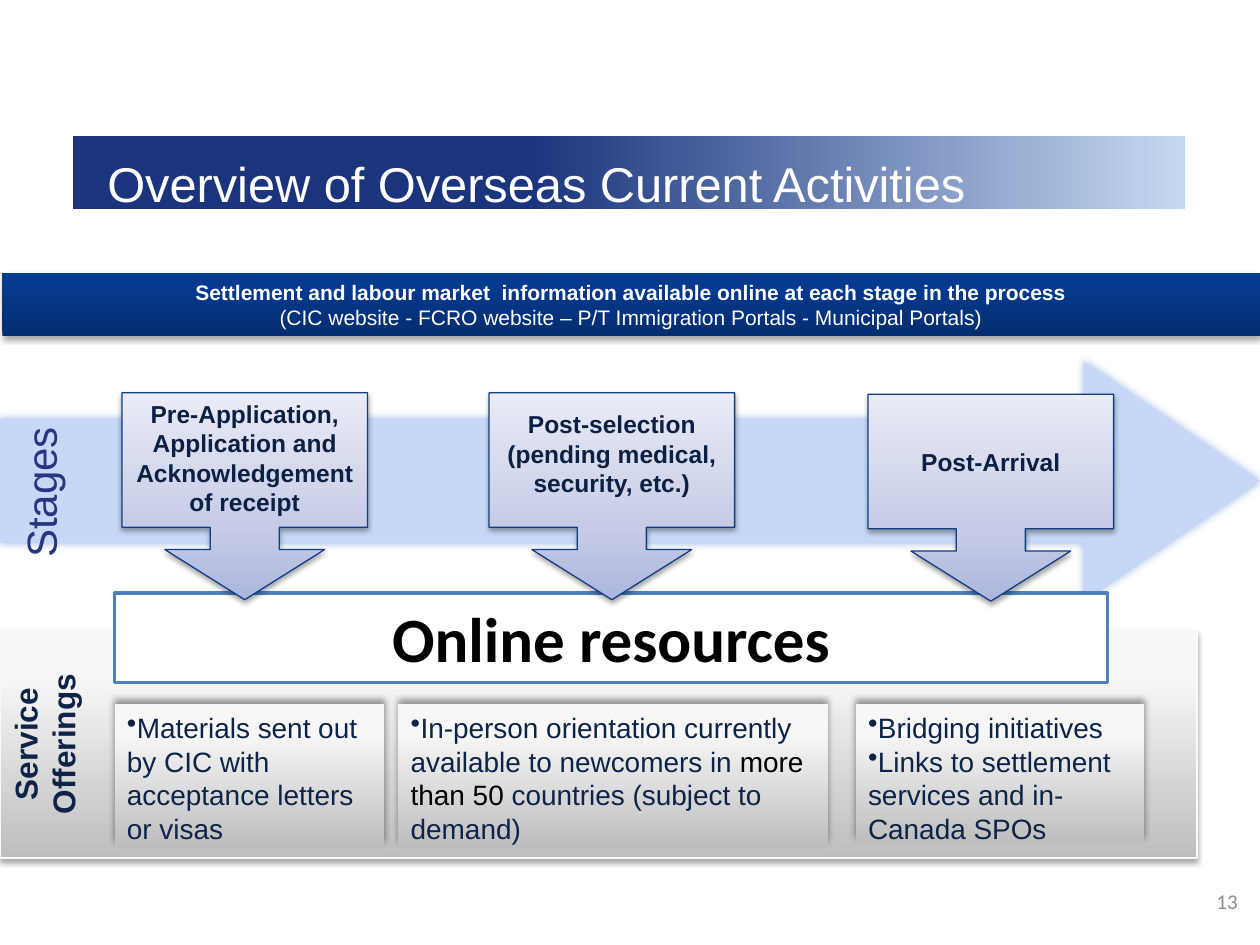
from lxml import etree
from pptx import Presentation
from pptx import util as u
from pptx.dml.color import RGBColor
from pptx.enum import shapes, text
from pptx.oxml import parse_xml
from pptx.oxml.ns import nsdecls, qn

KIND = shapes.MSO_SHAPE
ALIGN = text.PP_ALIGN
TOP, MID = text.MSO_ANCHOR.TOP, text.MSO_ANCHOR.MIDDLE

NAVY, BLACK, WHITE = "0D2448", "000000", "FFFFFF"
GREY = (270, (0, "BEBEBE"), (80, "F7F7F7"), (100, "F8F8F8"))
LILAC = (270, (0, "ACB6DE"), (35, "C6CCE7"), (100, "E9EBF6"))
BLUE = (270, (0, "042D6E"), (80, "053A8F"), (100, "033A92"))
TITLE = (0, (41, "1B357D"), (100, "C6D9F1"))
# colour, opacity %, blur pt, distance pt, angle
DROP = (BLACK, 35, 3.1, 1.8, 90)
RISE = (BLACK, 40, 4, 3, 270)
HALO = ("5B8AD8", 60, 4, 0, 0)


def color(code):
    return RGBColor.from_string(code)


def write(frame, paras, size=12, font="Arial", tint=NAVY, bold=False,
          align=ALIGN.CENTER, anchor=TOP, bullet=None, turn=None, pads=None):
    """Fill a frame; a paragraph is a string or a list of (text, colour)."""
    frame.word_wrap = True
    frame.vertical_anchor = anchor
    body = frame._txBody.bodyPr
    if turn:
        body.set("vert", turn)
    if pads:
        frame.margin_top, frame.margin_bottom = map(u.Cm, pads)
    for i, para in enumerate(paras):
        p = frame.add_paragraph() if i else frame.paragraphs[0]
        p.alignment = align
        if bullet:
            props = p._p.get_or_add_pPr()
            props.set("marL", "0")
            props.set("indent", "0")
            etree.SubElement(props, qn("a:buChar")).set("char", bullet)
        for part, hue in [(para, tint)] if isinstance(para, str) else para:
            run = p.add_run()
            run.text = part
            run.font.name, run.font.size = font, u.Pt(size)
            run.font.bold = bold
            run.font.color.rgb = color(hue)


class Deck:
    def __init__(self):
        self.file = Presentation()
        self.file.slide_width, self.file.slide_height = u.Cm(25.4), u.Cm(19.05)
        self.slide = self.file.slides.add_slide(self.file.slide_layouts[5])

    def title(self, words, area, **style):
        """Place the title in front of everything drawn so far."""
        head = self.slide.shapes.title
        head.left, head.top, head.width, head.height = map(u.Cm, area)
        self.slide.shapes._spTree.append(head._element)
        write(head.text_frame, [words], **style)

    def label(self, words, area, **style):
        box = self.slide.shapes.add_textbox(*map(u.Cm, area))
        write(box.text_frame, [words], **style)

    def shape(self, area, fill, kind=KIND.RECTANGLE, line=None, shade=None,
              adjust=(), paras=(), **style):
        item = self.slide.shapes.add_shape(kind, *map(u.Cm, area))
        for i, value in enumerate(adjust):
            item.adjustments[i] = value
        self.paint(item, fill)
        if line:
            item.line.color.rgb = color(line[0])
            item.line.width = u.Pt(line[1])
        else:
            item.line.fill.background()
        item.shadow.inherit = False
        if shade:
            self.shade(item, *shade)
        if paras:
            write(item.text_frame, paras, **style)

    def paint(self, item, fill):
        """Apply a plain colour, or a gradient as (angle, stop, stop...)."""
        if isinstance(fill, str):
            item.fill.solid()
            item.fill.fore_color.rgb = color(fill)
            return
        angle, *stops = fill
        marks = "".join(f'<a:gs pos="{at * 1000}"><a:srgbClr val="{hue}"/></a:gs>'
                        for at, hue in stops)
        item.fill.gradient()
        props = item._element.spPr
        props.replace(props.find(qn("a:gradFill")), parse_xml(
            f'<a:gradFill {nsdecls("a")} rotWithShape="1"><a:gsLst>{marks}</a:gsLst>'
            f'<a:lin ang="{angle * 60000}" scaled="0"/></a:gradFill>'))

    def shade(self, item, hue, alpha, blur, dist, angle):
        item._element.spPr.find(qn("a:effectLst")).append(parse_xml(
            f'<a:outerShdw {nsdecls("a")} blurRad="{u.Pt(blur)}" dist="{u.Pt(dist)}" '
            f'dir="{angle * 60000}" rotWithShape="0"><a:srgbClr val="{hue}">'
            f'<a:alpha val="{alpha * 1000}"/></a:srgbClr></a:outerShdw>'))


def main():
    deck = Deck()
    deck.shape((1.47, 2.74, 22.43, 1.47), TITLE)
    deck.shape((0, 7.29, 25.4, 4.8), "C6D8F5", KIND.RIGHT_ARROW,
               shade=HALO, adjust=(0.52, 0.741))
    deck.title("Overview of Overseas Current Activities", (1.91, 2.92, 22.23, 1.32),
               size=27.9, tint=WHITE, align=ALIGN.LEFT, anchor=MID, pads=(0.2, 0))

    deck.shape((0, 12.7, 24.13, 4.6), GREY, line=("F9F9F9", 0.75), shade=DROP,
               paras=["Service Offerings"], size=18, bold=True, turn="vert270")
    offers = [
        (2.31, 5.44, 2.87,
         ["Materials sent out by CIC with acceptance letters or visas"]),
        (8.03, 8.66, 2.87,
         [[("In-person orientation currently available to newcomers in ", NAVY),
           ("more than 50", BLACK), (" countries (subject to demand)", NAVY)]]),
        (17.25, 5.82, 2.79,
         ["Bridging initiatives",
          "Links to settlement services and in-Canada SPOs"]),
    ]
    for left, width, height, paras in offers:
        deck.shape((left, 14.2, width, height), GREY, shade=RISE, paras=paras,
                   size=16, align=ALIGN.LEFT, bullet="•")

    area = (0.05, 5.51, 25.35, 1.27)
    deck.shape(area, BLUE, shade=DROP)
    deck.label("Settlement and labour market  information available online "
               "at each stage in the process", (*area[:3], 0.75),
               tint=WHITE, bold=True)
    deck.label("(CIC website - FCRO website – P/T Immigration Portals - "
               "Municipal Portals)", (0.05, 6.02, 25.35, 0.75), tint=WHITE)
    deck.label("Stages", (0.05, 8.33, 1.52, 3.2), size=24, tint="263680",
               anchor=MID, turn="vert270")
    deck.shape((2.31, 11.96, 20.02, 1.8), WHITE, line=("4F81BD", 2),
               paras=["Online resources"], size=36, font="Calibri",
               tint=BLACK, bold=True)

    stages = [
        (17.5, 7.95, "Post-Arrival", MID, None),
        (9.86, 7.92, "Post-selection (pending medical, security, etc.)",
         MID, (0.13, 0.4)),
        (2.46, 7.92, "Pre-Application, Application and Acknowledgement of receipt",
         TOP, None),
    ]
    for left, top, words, anchor, pads in stages:
        deck.shape((left, top, 4.95, 4.17), LILAC, KIND.DOWN_ARROW_CALLOUT,
                   line=("133E83", 0.75), shade=DROP,
                   adjust=(0.334, 0.386, 0.242, 0.65), paras=[words], size=14,
                   tint="0B2042", bold=True, anchor=anchor, pads=pads)

    deck.label("13", (22.86, 17.65, 2.34, 1.02), font="Calibri", tint="8C8C8C",
               align=ALIGN.RIGHT, anchor=MID)
    deck.file.save("out.pptx")


if __name__ == "__main__":
    main()
